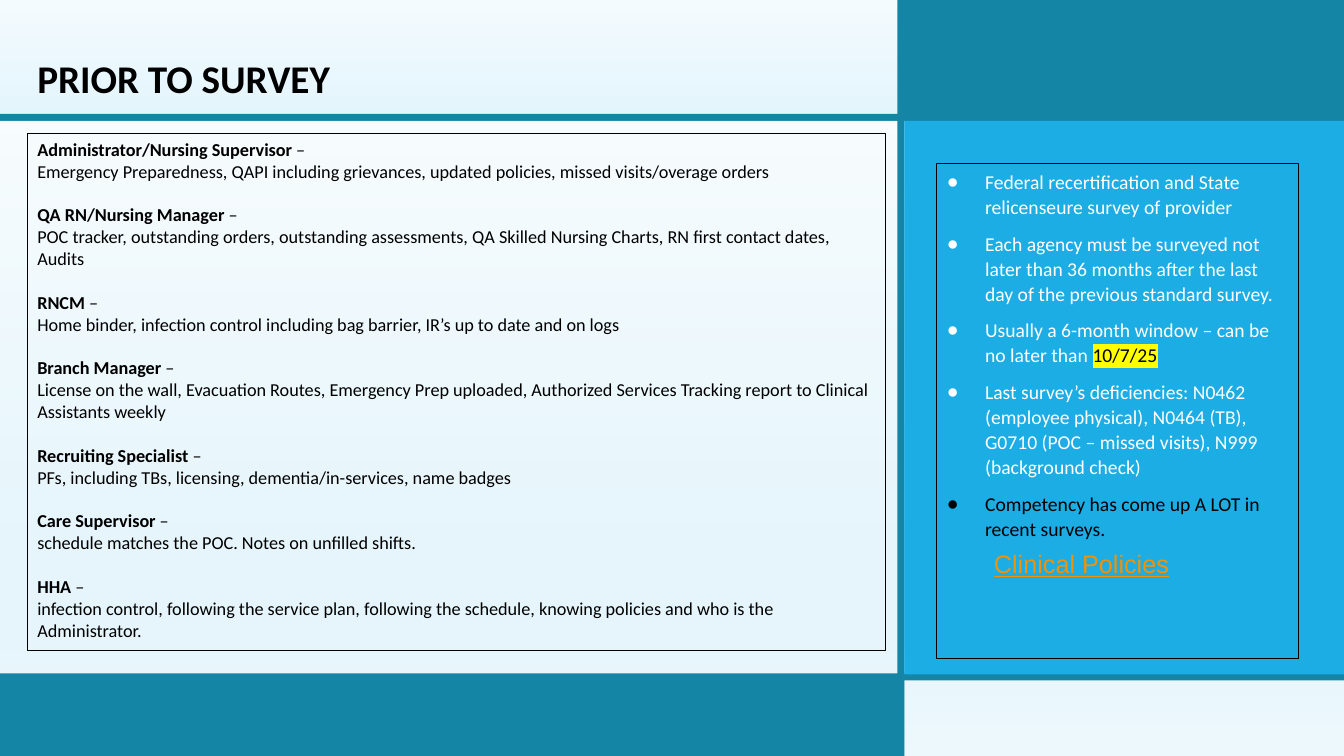
from copy import deepcopy
from lxml import etree
from pptx import Presentation
from pptx.dml.color import RGBColor
from pptx.enum.shapes import MSO_SHAPE
from pptx.enum.text import MSO_ANCHOR, MSO_AUTO_SIZE, PP_ALIGN
from pptx.oxml.ns import qn
from pptx.util import Inches, Pt

RECT = MSO_SHAPE.RECTANGLE
TOP, MIDDLE = MSO_ANCHOR.TOP, MSO_ANCHOR.MIDDLE
LEFT = PP_ALIGN.LEFT
NO_FIT = MSO_AUTO_SIZE.NONE
WHITE, BLACK, TEAL, BLUE = "FFFFFF", "000000", "1485A4", "1CADE4"
ORANGE, YELLOW = "F49100", "FFFF00"


def rgb(value):
    return RGBColor.from_string(value)


def add_run(p, text, size, color=BLACK, font="Calibri", bold=False, underline=False, highlight=None):
    r = p.add_run()
    r.text = text
    r.font.size = Pt(size)
    r.font.name = font
    r.font.bold = bold
    r.font.underline = underline
    r.font.color.rgb = rgb(color)
    if highlight:
        mark = etree.Element(qn("a:highlight"))
        etree.SubElement(mark, qn("a:srgbClr"), val=highlight)
        r.font._element.find(qn("a:solidFill")).addnext(mark)


prs = Presentation()
prs.slide_width, prs.slide_height = Inches(13.33), Inches(7.5)
s = prs.slides.add_slide(prs.slide_layouts[3])

fill = s.background.fill
fill.gradient()
fill.gradient_angle = 270
stops = next(s._element.iter(qn("a:gsLst")))
stop_model = deepcopy(stops[0])
for old in list(stops):
    stops.remove(old)
for position, color in [(0, "F4FBFE"), (74, "99DAF3"), (83, "99DAF3"), (100, "BBE6F7")]:
    stop = deepcopy(stop_model)
    stop.set("pos", str(position * 1000))
    for child in list(stop):
        stop.remove(child)
    etree.SubElement(stop, qn("a:srgbClr"), val=color)
    stops.append(stop)

panels = [
    (8.94, 0, 4.39, 1.16, TEAL),
    (0, 1.13, 13.33, 0.07, TEAL),
    (0, 1.2, 8.96, 5.49, WHITE),
    (0, 6.72, 8.91, 0.78, TEAL),
    (8.97, 6.74, 4.36, 0.76, WHITE),
    (0, 6.68, 13.33, 0.07, TEAL),
    (8.9, 0, 0.07, 7.5, TEAL),
    (8.97, 1.2, 4.36, 5.49, BLUE),
]
for x, y, w, h, color in panels:
    sp = s.shapes.add_shape(RECT, Inches(x), Inches(y), Inches(w), Inches(h))
    sp.shadow.inherit = False
    sp.line.fill.background()
    sp.fill.solid()
    sp.fill.fore_color.rgb = rgb(color)
    if color == WHITE:
        clr = next(sp._element.spPr.iter(qn("a:srgbClr")))
        etree.SubElement(clr, qn("a:alpha"), val="75000")

title, duties, facts = s.placeholders
boxes = [
    (title, 0.27, 0.49, 8.5, 0.57),
    (duties, 0.27, 1.32, 8.51, 5.13),
    (facts, 9.29, 1.62, 3.59, 4.91),
]
for sp, x, y, w, h in boxes:
    sp.left, sp.top, sp.width, sp.height = Inches(x), Inches(y), Inches(w), Inches(h)
    s.shapes._spTree.append(sp._element)
    tf = sp.text_frame
    tf.word_wrap = True
    tf.auto_size = NO_FIT
    tf.vertical_anchor = TOP
    if sp is not title:
        sp.line.color.rgb = rgb(BLACK)
        sp.line.width = Pt(0.75)

p = title.text_frame.paragraphs[0]
p.alignment = LEFT
add_run(p, "PRIOR TO SURVEY", 28, bold=True)

roles = [
    ("Administrator/Nursing Supervisor",
     "Emergency Preparedness, QAPI including grievances, updated policies, missed visits/overage orders"),
    ("QA RN/Nursing Manager",
     "POC tracker, outstanding orders, outstanding assessments, QA Skilled Nursing Charts, "
     "RN first contact dates, Audits"),
    ("RNCM", "Home binder, infection control including bag barrier, IR’s up to date and on logs"),
    ("Branch Manager",
     "License on the wall, Evacuation Routes, Emergency Prep uploaded, "
     "Authorized Services Tracking report to Clinical Assistants weekly"),
    ("Recruiting Specialist", "PFs, including TBs, licensing, dementia/in-services, name badges"),
    ("Care Supervisor", "schedule matches the POC. Notes on unfilled shifts."),
    ("HHA",
     "infection control, following the service plan, following the schedule, "
     "knowing policies and who is the Administrator."),
]
tf = duties.text_frame
for i, (role, duty) in enumerate(roles):
    head = tf.add_paragraph() if i else tf.paragraphs[0]
    body = tf.add_paragraph()
    add_run(head, role, 13, bold=True)
    add_run(head, " –", 13)
    add_run(body, duty, 13)
    for p in (head, body):
        p.space_before = Pt(15.6 if i and p is head else 0)
        pPr = p._p.get_or_add_pPr()
        pPr.set("marL", "0")
        pPr.set("indent", "0")
        etree.SubElement(pPr, qn("a:buNone"))

bullets = [
    [("Federal recertification and State relicenseure survey of provider", WHITE, None)],
    [("Each agency must be surveyed not later than 36 months after the last day "
      "of the previous standard survey.", WHITE, None)],
    [("Usually a 6-month window – can be no later than ", WHITE, None), ("10/7/25", BLACK, YELLOW)],
    [("Last survey’s deficiencies: N0462 (employee physical), N0464 (TB), "
      "G0710 (POC – missed visits), N999 (background check)", WHITE, None)],
    [("Competency has come up A LOT in recent surveys.", BLACK, None)],
]
tf = facts.text_frame
for i, runs in enumerate(bullets):
    p = tf.add_paragraph() if i else tf.paragraphs[0]
    p.line_spacing = 1.07
    p.space_before = Pt(0)
    p.space_after = Pt(8)
    pPr = p._p.get_or_add_pPr()
    pPr.set("marL", str(Inches(0.38)))
    pPr.set("indent", str(-Inches(0.38)))
    etree.SubElement(pPr, qn("a:buChar"), char="●")
    for text, color, highlight in runs:
        add_run(p, text, 14, color=color, highlight=highlight)

sp = s.shapes.add_textbox(Inches(9.76), Inches(5.39), Inches(2.5), Inches(0.4))
tf = sp.text_frame
tf.word_wrap = True
tf.vertical_anchor = MIDDLE
add_run(tf.paragraphs[0], "Clinical Policies", 18, color=ORANGE, font="Arial", underline=True)

prs.save("out.pptx")
